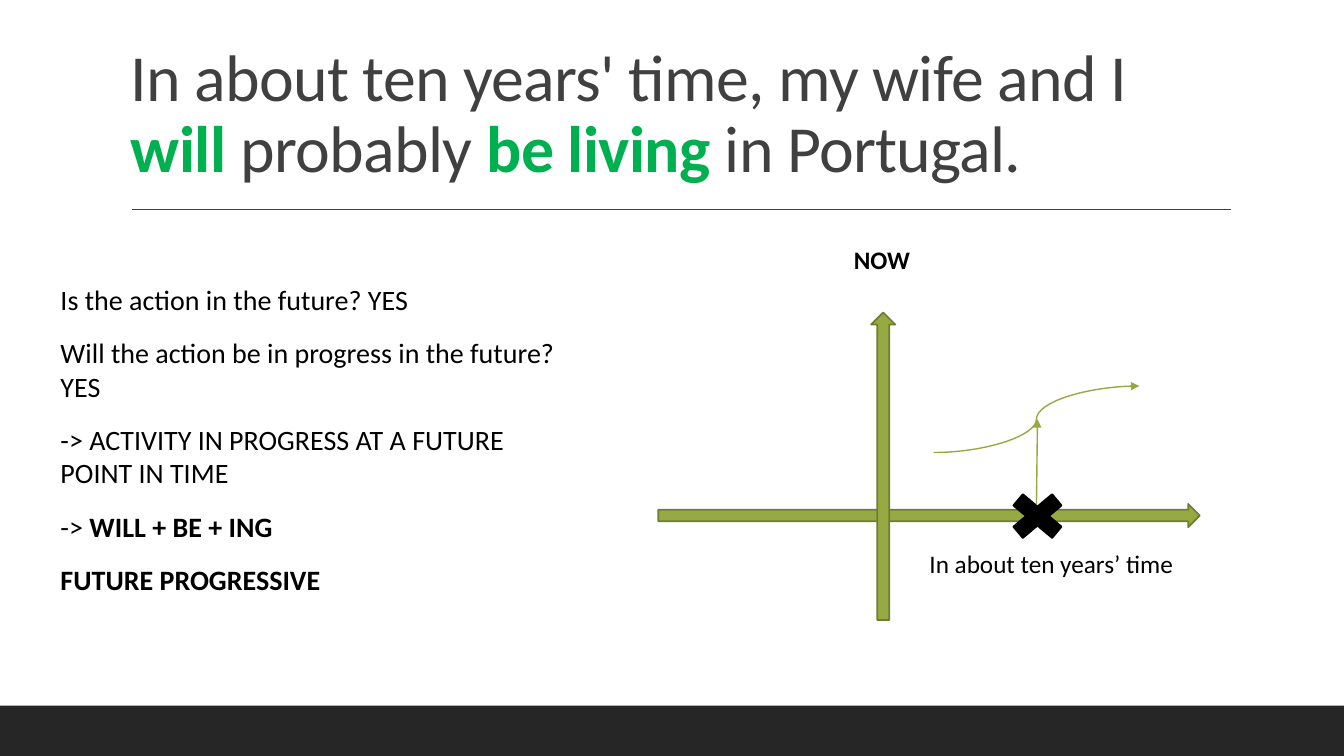
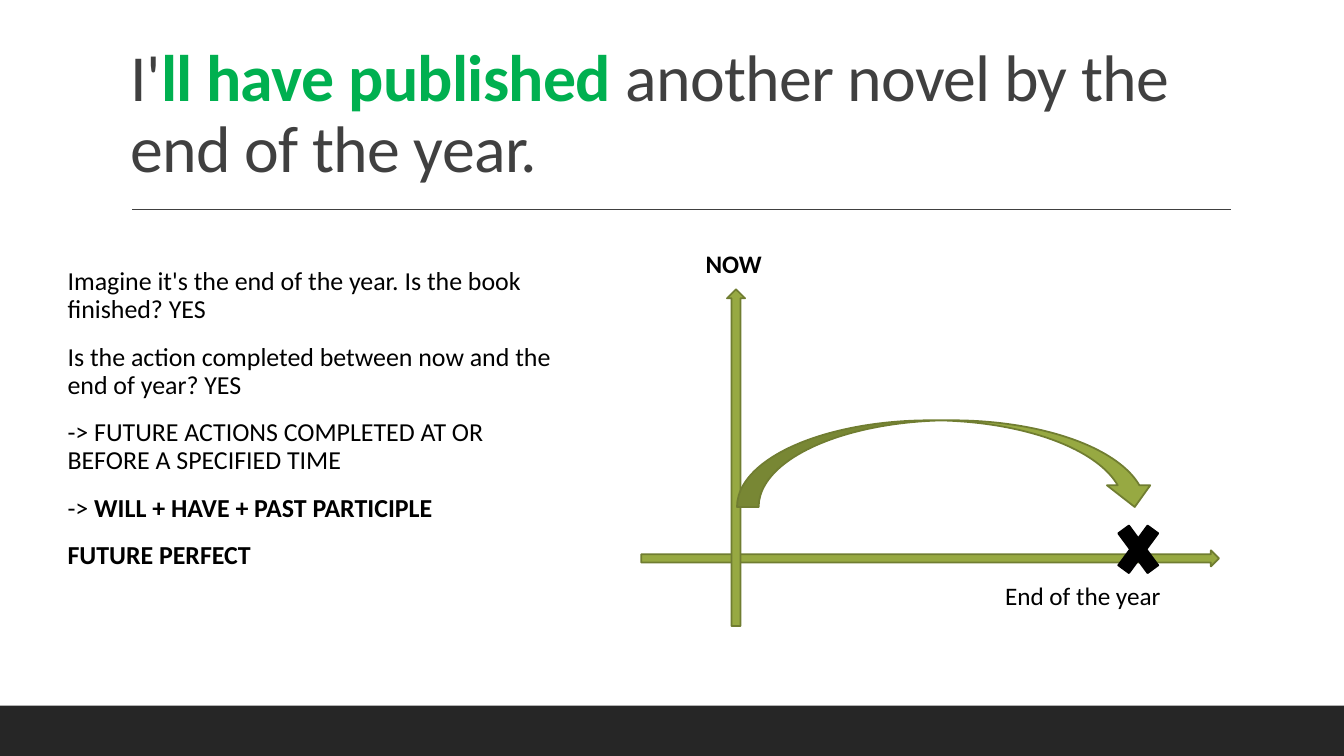
"""Build two slides that explain the future progressive and the future perfect."""
from lxml import etree
from pptx import Presentation
from pptx.dml.color import RGBColor
from pptx.enum.shapes import MSO_CONNECTOR, MSO_SHAPE
from pptx.enum.text import MSO_ANCHOR, MSO_AUTO_SIZE
from pptx.oxml.ns import qn
from pptx.util import Inches, Pt

STRAIGHT, CURVE = MSO_CONNECTOR.STRAIGHT, MSO_CONNECTOR.CURVE
RECTANGLE, CROSS = MSO_SHAPE.RECTANGLE, MSO_SHAPE.MATH_MULTIPLY
RIGHT_ARROW, UP_ARROW = MSO_SHAPE.RIGHT_ARROW, MSO_SHAPE.UP_ARROW
ARC_ARROW = MSO_SHAPE.CURVED_DOWN_ARROW
BOTTOM, TOP = MSO_ANCHOR.BOTTOM, MSO_ANCHOR.TOP
FIT_SHAPE, NO_FIT = MSO_AUTO_SIZE.SHAPE_TO_FIT_TEXT, MSO_AUTO_SIZE.NONE

COLORS = {
    "band": "262626",
    "title": "404040",
    "highlight": "00B050",
    "text": "000000",
    "olive": "97A942",
    "olive_edge": "707D31",
}
RGB = {name: RGBColor.from_string(value) for name, value in COLORS.items()}

TITLE = {
    "frame": {"word_wrap": True, "auto_size": NO_FIT, "vertical_anchor": BOTTOM},
    "paragraph": {"line_spacing": 0.9},
    "font": {"name": "Calibri", "size": Pt(47)},
    "colors": ("title", "highlight"),
    "tracking": "-50",
}
BODY = {
    "frame": {"word_wrap": True, "auto_size": NO_FIT, "vertical_anchor": TOP,
              "margin_left": Inches(0.2)},
    "paragraph": {"space_before": Pt(12), "space_after": Pt(2)},
    "font": {"name": "Calibri"},
    "colors": ("text", "text"),
    "tracking": "0",
}
LABEL = {
    "frame": {"word_wrap": True, "auto_size": FIT_SHAPE, "vertical_anchor": TOP},
    "paragraph": {},
    "font": {"name": "Calibri", "size": Pt(18)},
    "colors": ("text", "text"),
    "tracking": "0",
}

LESSONS = [
    {
        "title": [("In about ten years' time, my wife and I ", False), ("will ", True),
                  ("probably ", False), ("be living ", True), ("in Portugal.", False)],
        "body_box": (0.4, 2.75, 5.29, 3.35),
        "body_size": Pt(20),
        "body_spacing": 1.0,
        "body": [
            [("Is the action in the future? YES", False)],
            [("Will the action be in progress in the future? YES", False)],
            [("-> ACTIVITY IN PROGRESS AT A FUTURE POINT IN TIME", False)],
            [("-> ", False), ("WILL + BE + ING", True)],
            [("FUTURE PROGRESSIVE", True)],
        ],
        "diagram": [
            (RIGHT_ARROW, (6.53, 5, 5.37, 0.23), "olive", "olive_edge"),
            (UP_ARROW, (8.64, 3.1, 0.24, 3.05), "olive", "olive_edge"),
            (CROSS, (9.92, 4.81, 0.74, 0.62), "text", "text"),
        ],
        "pointers": [
            (CURVE, (9.26, 4.49, 11.3, 3.83)),
            (STRAIGHT, (10.28, 5, 10.29, 4.16)),
        ],
        "labels": [
            ((8.37, 2.37, 1, 0.4), "NOW", True),
            ((9.12, 5.39, 2.78, 0.4), "In about ten years’ time", False),
        ],
    },
    {
        "title": [("I'", False), ("ll have published ", True),
                  ("another novel by the end of the year.", False)],
        "body_box": (0.47, 2.61, 5.11, 3.35),
        "body_size": Pt(18.5),
        "body_spacing": 0.9,
        "body": [
            [("Imagine it's the end of the year. Is the book finished? YES", False)],
            [("Is the action completed between now and the end of year? YES", False)],
            [("-> FUTURE ACTIONS COMPLETED AT OR BEFORE A SPECIFIED TIME", False)],
            [("-> ", False), ("WILL + HAVE + PAST PARTICIPLE", True)],
            [("FUTURE PERFECT", True)],
        ],
        "diagram": [
            (RIGHT_ARROW, (6.36, 5.46, 5.73, 0.16), "olive", "olive_edge"),
            (UP_ARROW, (7.21, 2.87, 0.18, 3.34), "olive", "olive_edge"),
            (CROSS, (11.01, 5.07, 0.56, 0.76), "text", "text"),
            (ARC_ARROW, (7.31, 4.17, 4.16, 0.86), "olive", "olive_edge"),
        ],
        "pointers": [],
        "labels": [
            ((6.9, 2.41, 1, 0.4), "NOW", True),
            ((9.87, 5.71, 2.13, 0.4), "End of the year", False),
        ],
    },
]


def add_text(slide, box, paragraphs, style):
    frame = slide.shapes.add_textbox(*map(Inches, box)).text_frame
    for name, value in style["frame"].items():
        setattr(frame, name, value)
    for index, pieces in enumerate(paragraphs):
        paragraph = frame.add_paragraph() if index else frame.paragraphs[0]
        for name, value in style["paragraph"].items():
            setattr(paragraph, name, value)
        for words, emphasised in pieces:
            run = paragraph.add_run()
            run.text = words
            for name, value in style["font"].items():
                setattr(run.font, name, value)
            run.font.bold = emphasised
            run.font.color.rgb = RGB[style["colors"][emphasised]]
            run._r.get_or_add_rPr().set("spc", style["tracking"])


def add_line(slide, kind, ends, color, arrow=False):
    line = slide.shapes.add_connector(kind, *map(Inches, ends))
    line.line.color.rgb = RGB[color]
    line.line.width = Pt(1)
    if arrow:
        etree.SubElement(line.line._get_or_add_ln(), qn("a:tailEnd"), type="triangle")
    etree.SubElement(line._element.spPr, qn("a:effectLst"))


deck = Presentation()
deck.slide_width, deck.slide_height = Inches(13.33), Inches(7.5)
footer_band = (RECTANGLE, (0, 7, 13.33, 0.5), "band", None)

for lesson in LESSONS:
    slide = deck.slides.add_slide(deck.slide_layouts[6])
    for kind, box, fill, edge in [footer_band, *lesson["diagram"]]:
        figure = slide.shapes.add_shape(kind, *map(Inches, box))
        figure.shadow.inherit = False
        figure.fill.solid()
        figure.fill.fore_color.rgb = RGB[fill]
        if edge:
            figure.line.color.rgb = RGB[edge]
            figure.line.width = Pt(1.25)
        else:
            figure.line.fill.background()

    add_line(slide, STRAIGHT, (1.31, 2.08, 12.21, 2.08), "title")
    for kind, ends in lesson["pointers"]:
        add_line(slide, kind, ends, "olive", arrow=True)

    add_text(slide, (1.2, 0.31, 11, 1.59), [lesson["title"]], TITLE)
    body_style = {
        **BODY,
        "font": {**BODY["font"], "size": lesson["body_size"]},
        "paragraph": {**BODY["paragraph"], "line_spacing": lesson["body_spacing"]},
    }
    add_text(slide, lesson["body_box"], lesson["body"], body_style)
    for box, words, emphasised in lesson["labels"]:
        add_text(slide, box, [[(words, emphasised)]], LABEL)

deck.save("out.pptx")
